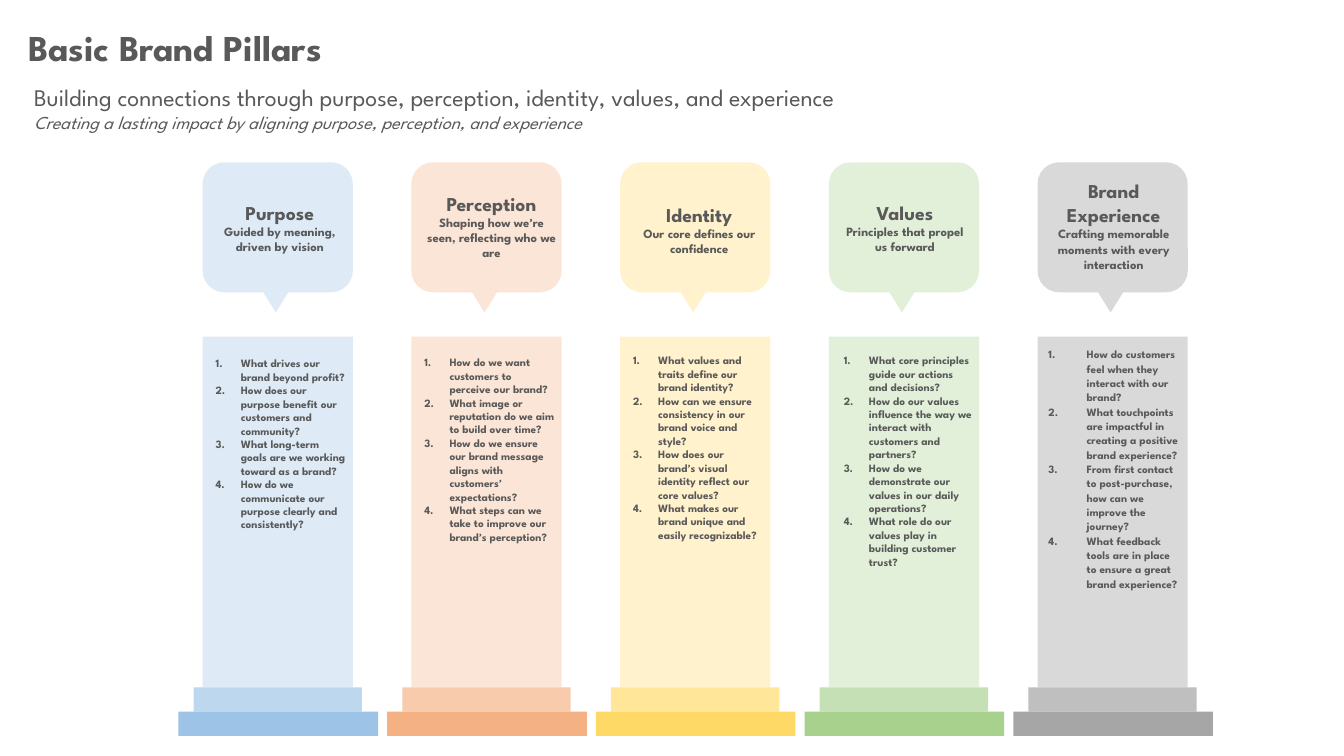
from dataclasses import dataclass

from lxml.etree import SubElement
from pptx import Presentation
from pptx.dml.color import RGBColor
from pptx.enum.shapes import MSO_SHAPE as SHAPE
from pptx.enum.text import MSO_ANCHOR as ANCHOR, MSO_AUTO_SIZE as AUTO, PP_ALIGN as ALIGN
from pptx.oxml.ns import qn
from pptx.util import Inches, Pt


@dataclass(frozen=True)
class Theme:
    font: str = "League Spartan"
    apostrophe_font: str = "Karla"
    ink: str = "595959"
    title: int = 26
    subtitle: int = 17
    tagline: int = 13
    heading: int = 14
    summary: int = 9
    question: int = 8
    # Light, middle and dark tone of each pillar
    tones: tuple = (
        ("DEEBF7", "BDD7EE", "9DC3E6"),
        ("FBE5D6", "F8CBAD", "F4B183"),
        ("FFF2CC", "FFE699", "FFD966"),
        ("E2F0D9", "C5E0B4", "A9D18E"),
        ("D9D9D9", "BFBFBF", "A6A6A6"),
    )


theme = Theme()


def add_text(tf, text, size, bold=True, italic=False, align=None, indent=None, spacing=None):
    """Add a paragraph to a text frame; an indent makes it a numbered item."""
    p = tf.paragraphs[0] if not tf.text else tf.add_paragraph()
    if indent:
        pPr = p._p.get_or_add_pPr()
        pPr.set("marL", str(Inches(indent)))
        pPr.set("indent", str(-Inches(indent)))
        SubElement(pPr, qn("a:buFont"), typeface="+mj-lt")
        SubElement(pPr, qn("a:buAutoNum"), type="arabicPeriod")
    p.alignment = align
    p.line_spacing = spacing
    for piece in text.replace("’", "|’|").split("|"):
        r = p.add_run()
        r.text = piece
        r.font.name = theme.apostrophe_font if piece == "’" else theme.font
        r.font.size = Pt(size)
        r.font.bold = bold
        r.font.italic = italic
        r.font.color.rgb = RGBColor.from_string(theme.ink)


def add_block(shapes, kind, x, y, w, h, color):
    """Add a plain filled shape without outline."""
    sp = shapes.add_shape(kind, Inches(x), Inches(y), Inches(w), Inches(h))
    sp.shadow.inherit = False
    sp.fill.solid()
    sp.fill.fore_color.rgb = RGBColor.from_string(color)
    sp.line.fill.background()
    return sp


# Heading, summary, questions, then the heading and question box positions
# (x from the pillar's left edge, y on the slide), number indent, line spacing
pillars = [
    ("Purpose", "Guided by meaning, driven by vision",
     ["What drives our brand beyond profit?",
      "How does our purpose benefit our customers and community?",
      "What long-term goals are we working toward as a brand?",
      "How do we communicate our purpose clearly and consistently?"],
     (0.02, 1.94), (0.03, 3.49), 0.25, None),
    ("Perception", "Shaping how we’re seen, reflecting who we are",
     ["How do we want customers to perceive our brand?",
      "What image or reputation do we aim to build over time?",
      "How do we ensure our brand message aligns with customers’ expectations?",
      "What steps can we take to improve our brand’s perception?"],
     (0.05, 1.85), (0.03, 3.48), 0.25, None),
    ("Identity", "Our core defines our confidence",
     ["What values and traits define our brand identity?",
      "How can we ensure consistency in our brand voice and style?",
      "How does our brand’s visual identity reflect our core values?",
      "What makes our brand unique and easily recognizable?"],
     (0.04, 1.96), (0.03, 3.46), 0.25, None),
    ("Values", "Principles that propel us forward",
     ["What core principles guide our actions and decisions?",
      "How do our values influence the way we interact with customers and partners?",
      "How do we demonstrate our values in our daily operations?",
      "What role do our values play in building customer trust?"],
     (0.01, 1.94), (0.05, 3.46), 0.25, None),
    ("Brand Experience", "Crafting memorable moments with every interaction",
     ["How do customers feel when they interact with our brand?",
      "What touchpoints are impactful in creating a positive brand experience?",
      "From first contact to post-purchase, how can we improve the journey?",
      "What feedback tools are in place to ensure a great brand experience?"],
     (0.01, 1.73), (0.01, 3.39), 0.38, 1.07),
]
LEFT, PITCH, WIDTH = 2.01, 2.07, 1.49

prs = Presentation()
prs.slide_width, prs.slide_height = Inches(13.33), Inches(7.5)
s = prs.slides.add_slide(prs.slide_layouts[6])

# Title and subtitle
title = s.shapes.add_textbox(Inches(0.18), Inches(0.2), Inches(8.08), Inches(0.54))
title.text_frame.word_wrap = True
add_text(title.text_frame, "Basic Brand Pillars", theme.title)

subtitle = s.shapes.add_textbox(Inches(0.24), Inches(0.77), Inches(9.84), Inches(0.61))
tf = subtitle.text_frame
tf.word_wrap = False
tf.auto_size = AUTO.SHAPE_TO_FIT_TEXT
tf.vertical_anchor = ANCHOR.MIDDLE
add_text(tf, "Building connections through purpose, perception, identity, values, and experience",
         theme.subtitle, bold=False)
add_text(tf, "Creating a lasting impact by aligning purpose, perception, and experience",
         theme.tagline, bold=False, italic=True)

# Pillars
for i, (pillar, tones) in enumerate(zip(pillars, theme.tones)):
    heading, summary, questions, heading_at, questions_at, indent, spacing = pillar
    light, middle, dark = tones
    x = LEFT + PITCH * i

    # Speech bubble
    bubble = s.shapes.add_group_shape()
    add_block(bubble.shapes, SHAPE.ROUNDED_RECTANGLE, x, 1.61, WIDTH, 1.29, light)
    pointer = add_block(bubble.shapes, SHAPE.ISOSCELES_TRIANGLE, x + 0.57, 2.85, 0.31, 0.25, light)
    pointer.rotation = 180

    # Column and its two steps
    add_block(s.shapes, SHAPE.RECTANGLE, x, 3.34, WIDTH, 3.48, light)
    add_block(s.shapes, SHAPE.RECTANGLE, x - 0.09, 6.82, 1.67, 0.24, middle)
    add_block(s.shapes, SHAPE.RECTANGLE, x - 0.24, 7.06, 1.98, 0.24, dark)

    # Heading with summary
    dx, y = heading_at
    tf = s.shapes.add_textbox(Inches(x + dx), Inches(y), Inches(WIDTH), Inches(0.6)).text_frame
    tf.word_wrap = True
    add_text(tf, heading, theme.heading, align=ALIGN.CENTER)
    add_text(tf, summary, theme.summary, align=ALIGN.CENTER)

    # Numbered questions
    dx, y = questions_at
    tf = s.shapes.add_textbox(Inches(x + dx), Inches(y), Inches(WIDTH), Inches(2.75)).text_frame
    tf.word_wrap = True
    for question in questions:
        add_text(tf, question, theme.question, indent=indent, spacing=spacing)

prs.save("out.pptx")
